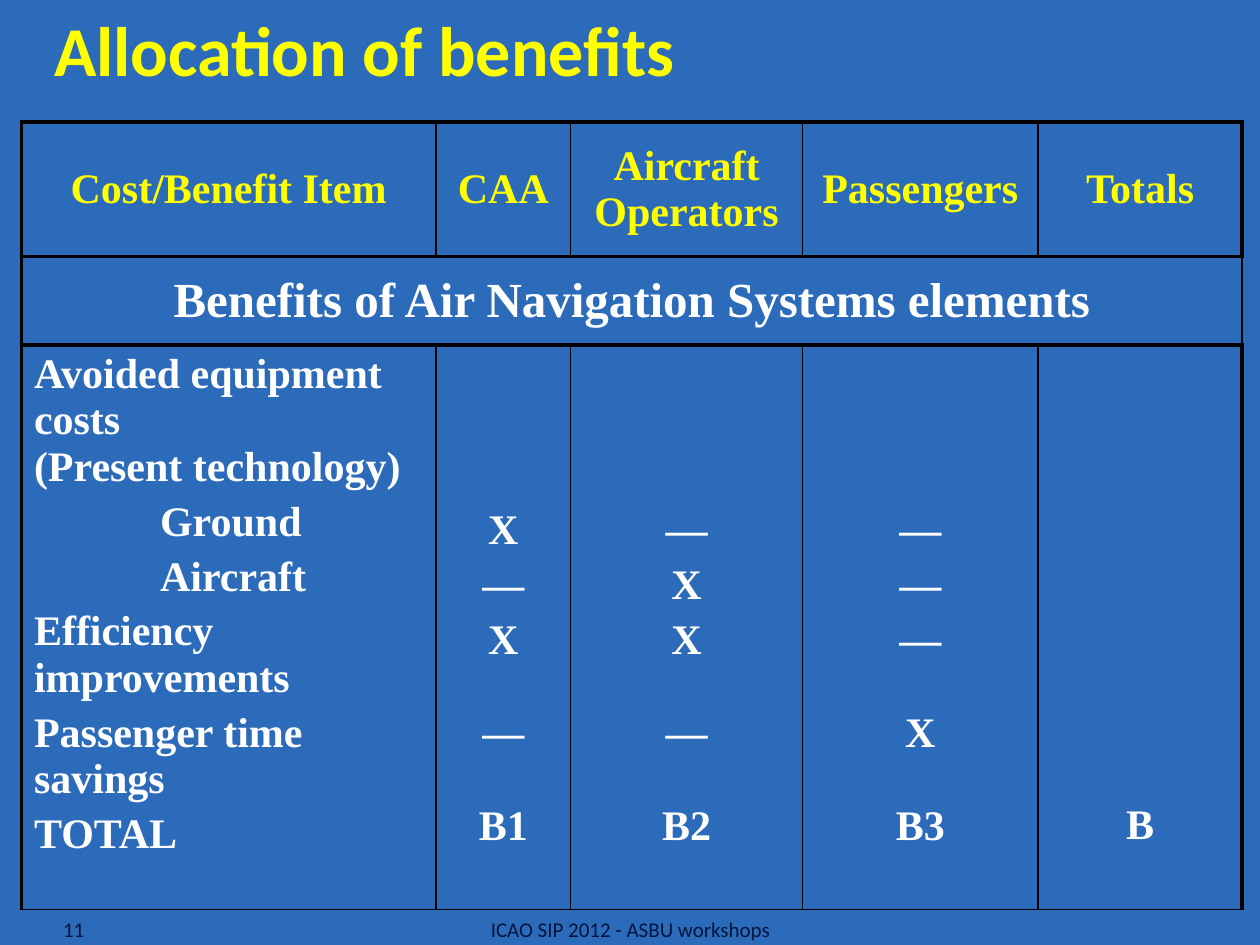
import pptx
import pptx.util
import pptx.dml.color
import pptx.enum.text
from lxml import etree

Inches, Pt = pptx.util.Inches, pptx.util.Pt
ALIGN, ANCHOR = pptx.enum.text.PP_ALIGN, pptx.enum.text.MSO_ANCHOR
HUES = {"back": "2C6ABA", "head": "FFFF00", "body": "FFFFFF",
        "foot": "00153E", "rule": "000000"}
WIDE, HIGH = 10, 7.5
THICK, THIN = 2.25, 1
LINE, GAP = 26.6, 4.8  # one text line and the gap between items, in points


class Deck:
    def __init__(self):
        self.file = pptx.Presentation()
        self.file.slide_width, self.file.slide_height = Inches(WIDE), Inches(HIGH)
        self.page = self.file.slides.add_slide(self.file.slide_layouts[5])
        fill = self.page.background.fill
        fill.solid()
        fill.fore_color.rgb = self.hue("back")

    def hue(self, name):
        return pptx.dml.color.RGBColor.from_string(HUES[name])

    def box(self, x, y, w, h):
        """Turn shares of the slide's size into lengths."""
        return [Inches(n) for n in (x * WIDE, y * HIGH, w * WIDE, h * HIGH)]

    def text(self, frame, items, hue, size, face, bold=False, align=ALIGN.LEFT):
        """Add (words, space before, indent) items as paragraphs."""
        frame.word_wrap = True
        for i, (words, gap, indent) in enumerate(items):
            par = frame.paragraphs[0] if i == 0 else frame.add_paragraph()
            par.alignment = align
            par.space_before = Pt(gap)
            if indent:
                par._p.get_or_add_pPr().set("marL", str(Inches(indent)))
            run = par.add_run()
            run.text = words
            font = run.font
            font.name, font.size, font.bold = face, Pt(size), bold
            font.color.rgb = self.hue(hue)

    def title(self, words, *area):
        hold = self.page.shapes.title
        hold.left, hold.top, hold.width, hold.height = self.box(*area)
        hold.text_frame.vertical_anchor = ANCHOR.TOP
        self.text(hold.text_frame, [(words, 0, 0)], "head", 40, "Calibri", True)

    def note(self, words, area, align, inset):
        frame = self.page.shapes.add_textbox(*self.box(*area)).text_frame
        frame.vertical_anchor = ANCHOR.MIDDLE
        frame.margin_left = Inches(inset)
        frame.margin_right = frame.margin_top = frame.margin_bottom = 0
        self.text(frame, [(words, 0, 0)], "foot", 12, "Calibri", align=align)

    def grid(self, x, y, cols, rows):
        area = self.box(x, y, sum(cols) / WIDE, sum(rows) / HIGH)
        table = self.page.shapes.add_table(len(rows), len(cols), *area).table
        table.first_row = table.horz_banding = False
        for col, size in zip(table.columns, cols):
            col.width = Inches(size)
        for row, size in zip(table.rows, rows):
            row.height = Inches(size)
        for r in range(len(rows)):
            for c in range(len(cols)):
                cell = table.cell(r, c)
                self.edge(cell, "L", THIN if c else THICK)
                self.edge(cell, "R", THICK if c == len(cols) - 1 else THIN)
                self.edge(cell, "T", THICK)
                self.edge(cell, "B", THIN if r == len(rows) - 1 else THICK)
                cell.fill.background()
        return table

    def edge(self, cell, side, width):
        space = "{http://schemas.openxmlformats.org/drawingml/2006/main}"
        props = cell._tc.get_or_add_tcPr()
        line = etree.SubElement(props, space + "ln" + side, w=str(Pt(width)))
        fill = etree.SubElement(line, space + "solidFill")
        etree.SubElement(fill, space + "srgbClr", val=HUES["rule"])

    def cell(self, cell, items, hue="body", size=24, align=ALIGN.CENTER,
             anchor=ANCHOR.MIDDLE, top=0.05):
        cell.vertical_anchor = anchor
        cell.margin_top = Inches(top)
        self.text(cell.text_frame, items, hue, size, "Times New Roman", True, align)


def main():
    deck = Deck()
    deck.title("Allocation of benefits", 0.033, 0, 0.683, 0.103)

    # Table frame and header row
    table = deck.grid(0.017, 0.129, [3.29, 1.07, 1.84, 1.87, 1.62], [1.07, 0.7, 4.48])
    heads = ["Cost/Benefit Item", "CAA", "Aircraft Operators", "Passengers", "Totals"]
    for c, words in enumerate(heads):
        deck.cell(table.cell(0, c), [(words, 0, 0)], "head")

    # Section row
    table.cell(1, 0).merge(table.cell(1, 4))
    deck.cell(table.cell(1, 0),
              [("Benefits of Air Navigation Systems elements", 0, 0)], size=28)

    # Benefit items
    items = [("Avoided equipment costs", 0, 0), ("(Present technology)", 0, 0),
             ("Ground", GAP, 1), ("Aircraft", GAP, 1),
             ("Efficiency improvements", GAP, 0),
             ("Passenger time savings", GAP, 0), ("TOTAL", GAP, 0)]
    deck.cell(table.cell(2, 0), items, align=ALIGN.LEFT, anchor=ANCHOR.TOP)

    # Marks for each party, then the grand total
    gaps = [0, GAP, GAP, LINE, LINE]
    marks = [["X", "—", "X", "—", "B1"], ["—", "X", "X", "—", "B2"],
             ["—", "—", "—", "X", "B3"]]
    for c, col in enumerate(marks, 1):
        deck.cell(table.cell(2, c), [(m, gap, 0) for m, gap in zip(col, gaps)],
                  anchor=ANCHOR.TOP, top=1.29)
    deck.cell(table.cell(2, 4), [("B", 0, 0)], anchor=ANCHOR.TOP, top=3.63)

    # Footer
    deck.note("11", (0, 0.967, 0.342, 0.033), ALIGN.LEFT, 0.5)
    deck.note("ICAO SIP 2012 - ASBU workshops", (0.142, 0.967, 0.717, 0.033),
              ALIGN.CENTER, 0)
    deck.file.save("out.pptx")


if __name__ == "__main__":
    main()
